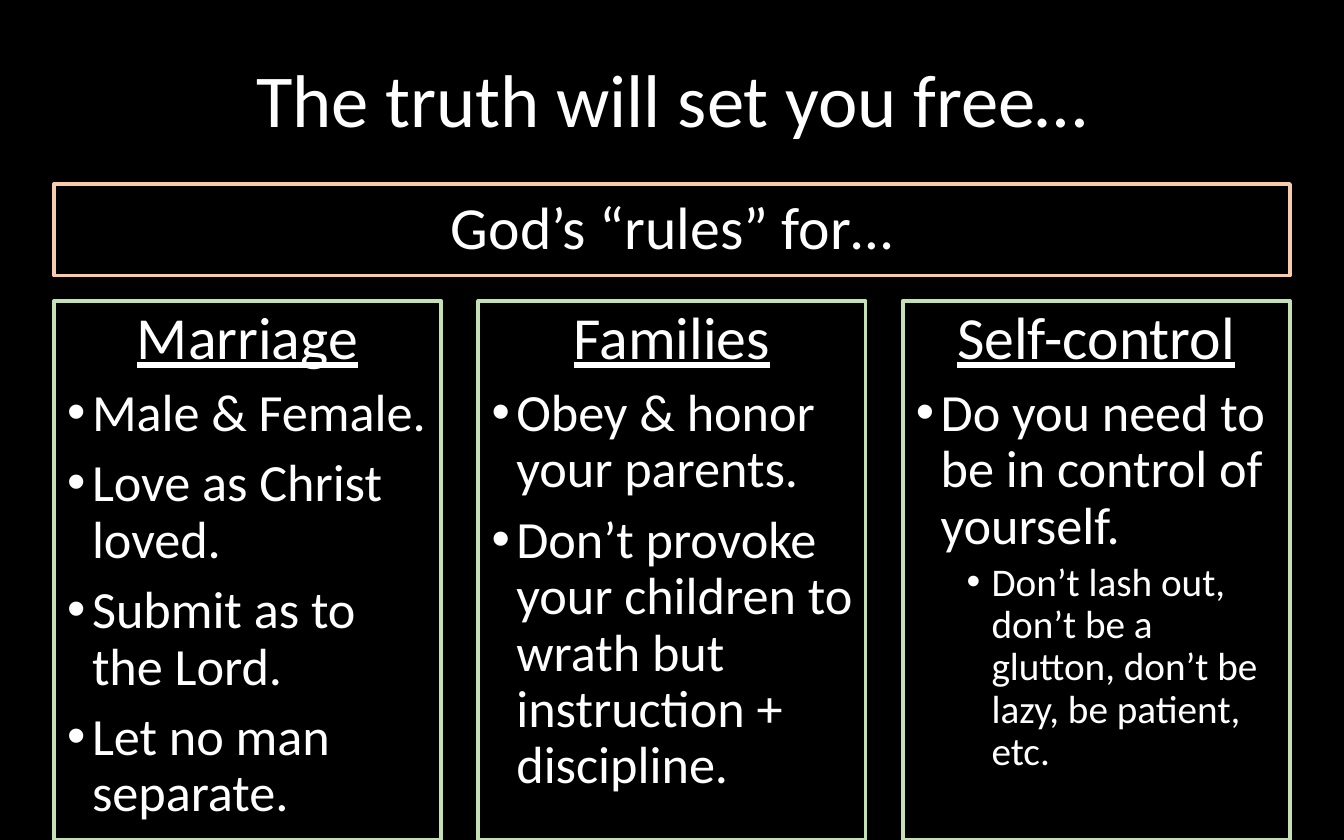
"""Build the slide with a title, a banner and three columns of rules."""
import pptx
import pptx.dml.color
import pptx.enum.text
import pptx.oxml
import pptx.oxml.ns
import pptx.util
from lxml import etree

Cm = pptx.util.Cm
Pt = pptx.util.Pt
RGB = pptx.dml.color.RGBColor.from_string
ALIGN = pptx.enum.text.PP_ALIGN
ANCHOR = pptx.enum.text.MSO_ANCHOR

COLORS = {"back": "000000", "text": "FFFFFF", "banner": "F8CBAD", "column": "C5E0B4"}
FORMATS = {
    "title": {"font": {"size": Pt(40)},
              "para": {"alignment": ALIGN.CENTER, "space_before": Pt(0)}},
    "banner": {"font": {"size": Pt(32)},
               "para": {"alignment": ALIGN.CENTER, "space_before": Pt(7.5)}},
    "heading": {"font": {"size": Pt(32), "underline": True},
                "para": {"alignment": ALIGN.CENTER, "space_before": Pt(7.5)}},
    "rule": {"font": {"size": Pt(28)}, "indent": Cm(0.47),
             "para": {"alignment": ALIGN.LEFT, "space_before": Pt(7.5)}},
    "detail": {"font": {"size": Pt(21)}, "indent": Cm(1.43),
               "para": {"alignment": ALIGN.LEFT, "space_before": Pt(3.8), "level": 1}},
}
COLUMNS = [
    [("heading", "Marriage"),
     ("rule", "Male & Female."),
     ("rule", "Love as Christ loved."),
     ("rule", "Submit as to the Lord."),
     ("rule", "Let no man separate.")],
    [("heading", "Families"),
     ("rule", "Obey & honor your parents."),
     ("rule", "Don’t provoke your children to wrath but instruction + discipline.")],
    [("heading", "Self-control"),
     ("rule", "Do you need to be in control of yourself."),
     ("detail", "Don’t lash out, don’t be a glutton, don’t be lazy, be patient, etc.")],
]


def add_box(s, left, top, width, height, items, line=None, anchor=ANCHOR.MIDDLE):
    sp = s.shapes.add_textbox(Cm(left), Cm(top), Cm(width), Cm(height))
    if line:
        sp.line.color.rgb = RGB(COLORS[line])
        sp.line.width = Pt(2)
    tf = sp.text_frame
    tf.word_wrap = True
    tf.vertical_anchor = anchor
    for i, (kind, text) in enumerate(items):
        p = tf.add_paragraph() if i else tf.paragraphs[0]
        add_text(p, text, FORMATS[kind])


def add_text(p, text, fmt):
    p.line_spacing = 0.9
    for name, value in fmt["para"].items():
        setattr(p, name, value)
    if "indent" in fmt:
        pPr = p._p.get_or_add_pPr()
        pPr.set("marL", str(fmt["indent"]))
        pPr.set("indent", str(-Cm(0.47)))
        font = etree.SubElement(pPr, pptx.oxml.ns.qn("a:buFont"))
        font.set("typeface", "Arial")
        etree.SubElement(pPr, pptx.oxml.ns.qn("a:buChar")).set("char", "•")
    r = p.add_run()
    r.text = text
    r.font.name = "Calibri"
    r.font.color.rgb = RGB(COLORS["text"])
    for name, value in fmt["font"].items():
        setattr(r.font, name, value)


prs = pptx.Presentation()
prs.slide_width, prs.slide_height = Cm(25.4), Cm(15.88)
s = prs.slides.add_slide(prs.slide_layouts[6])
s.background.fill.solid()
s.background.fill.fore_color.rgb = RGB(COLORS["back"])

left, width, col_width = 1.02, 23.36, 7.32
step = (width - col_width) / 2

add_box(s, 1.75, 0.41, 21.9, 3.07, [("title", "The truth will set you free…")])
add_box(s, left, 3.48, width, 1.73, [("banner", "God’s “rules” for…")], "banner")
for i, items in enumerate(COLUMNS):
    add_box(s, left + i * step, 5.69, col_width, 10.19, items, "column", ANCHOR.TOP)

prs.save("out.pptx")
